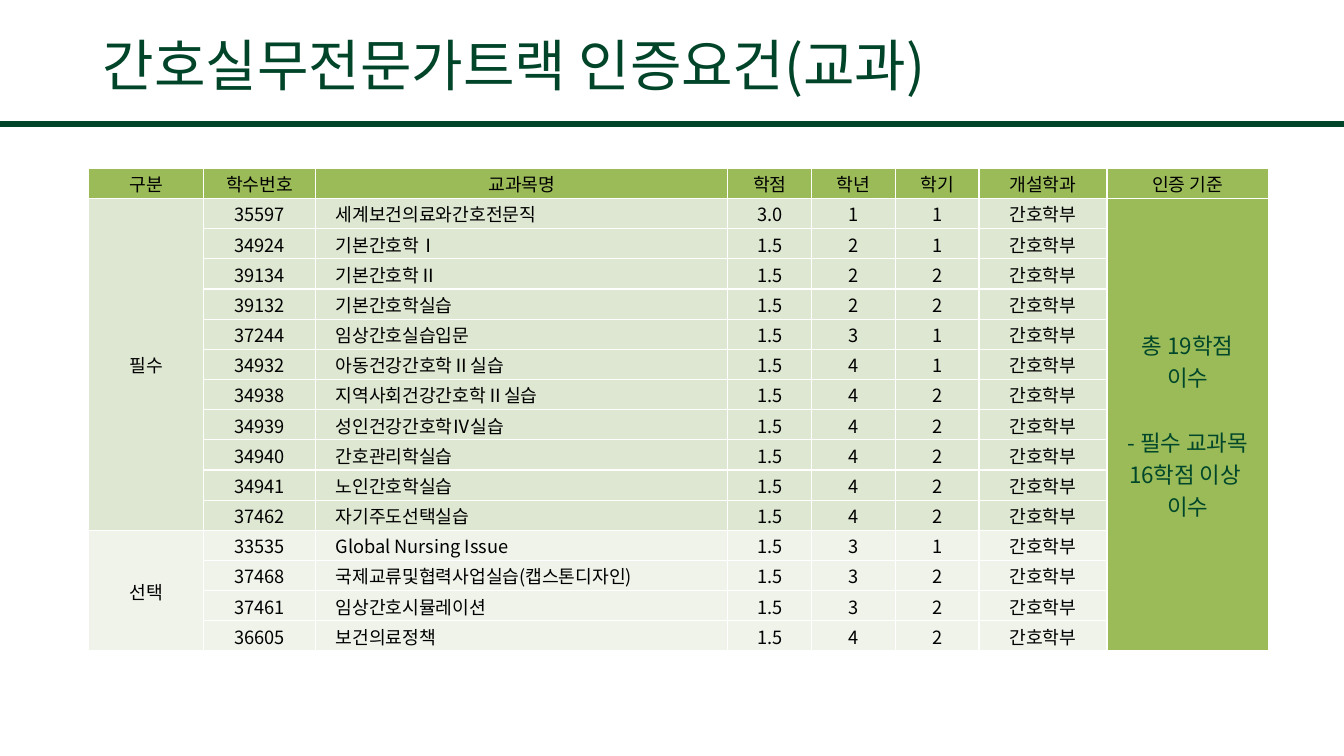
from pptx import Presentation, util as u
from pptx.dml.color import RGBColor
from pptx.enum import shapes, text
from pptx.oxml.ns import qn
from lxml import etree

THEME = dict(font="Noto Sans CJK KR", title=40, cell=13, rule=4.5, criteria=16,
             green="004529", dark="00462A", header="9BBB59",
             required="DEE7D1", elective="EFF3EA", black="000000", border="FFFFFF")
W, H = 13.33, 7.5


def style(p, size, color, align):
    p.alignment = align
    for r in p.runs:
        r.font.size = u.Pt(size)
        r.font.name = THEME["font"]
        r.font.color.rgb = RGBColor.from_string(THEME[color])
        etree.SubElement(r.font._element, qn("a:ea"), typeface=THEME["font"])


def add_borders(cell):
    tcPr = cell._tc.get_or_add_tcPr()
    for side in ("a:lnL", "a:lnR", "a:lnT", "a:lnB"):
        ln = etree.SubElement(tcPr, qn(side), w=str(u.Pt(1)))
        fill = etree.SubElement(ln, qn("a:solidFill"))
        etree.SubElement(fill, qn("a:srgbClr"), val=THEME["border"])


prs = Presentation()
prs.slide_width, prs.slide_height = u.Inches(W), u.Inches(H)
s = prs.slides.add_slide(prs.slide_layouts[5])
LEFT, CENTER = text.PP_ALIGN.LEFT, text.PP_ALIGN.CENTER

# Rule under the title
rule = s.shapes.add_connector(shapes.MSO_CONNECTOR.STRAIGHT, 0, u.Inches(1.23),
                              u.Inches(W), u.Inches(1.23))
rule.line.color.rgb = RGBColor.from_string(THEME["green"])
rule.line.width = u.Pt(THEME["rule"])
etree.SubElement(rule._element.spPr, qn("a:effectLst"))

# Title
title = s.shapes.title
title.left, title.top, title.width, title.height = map(u.Inches, (0.92, 0.16, 11.5, 1.03))
tf = title.text_frame
tf.text = "간호실무전문가트랙 인증요건(교과)"
tf.vertical_anchor = text.MSO_ANCHOR.MIDDLE
tf.auto_size = text.MSO_AUTO_SIZE.NONE
tf.paragraphs[0].line_spacing = 0.9
style(tf.paragraphs[0], THEME["title"], "green", LEFT)

# Course data: number, name, credits, year, semester
headers = ["구분", "학수번호", "교과목명", "학점", "학년", "학기", "개설학과", "인증 기준"]
groups = [
    ("필수", "required", [
        ("35597", "세계보건의료와간호전문직", "3.0", "1", "1"),
        ("34924", "기본간호학Ⅰ", "1.5", "2", "1"),
        ("39134", "기본간호학Ⅱ", "1.5", "2", "2"),
        ("39132", "기본간호학실습", "1.5", "2", "2"),
        ("37244", "임상간호실습입문", "1.5", "3", "1"),
        ("34932", "아동건강간호학Ⅱ실습", "1.5", "4", "1"),
        ("34938", "지역사회건강간호학Ⅱ실습", "1.5", "4", "2"),
        ("34939", "성인건강간호학Ⅳ실습", "1.5", "4", "2"),
        ("34940", "간호관리학실습", "1.5", "4", "2"),
        ("34941", "노인간호학실습", "1.5", "4", "2"),
        ("37462", "자기주도선택실습", "1.5", "4", "2"),
    ]),
    ("선택", "elective", [
        ("33535", "Global Nursing Issue", "1.5", "3", "1"),
        ("37468", "국제교류및협력사업실습(캡스톤디자인)", "1.5", "3", "2"),
        ("37461", "임상간호시뮬레이션", "1.5", "3", "2"),
        ("36605", "보건의료정책", "1.5", "4", "2"),
    ]),
]
criteria = "총 19학점\n이수\n- 필수 교과목\n16학점 이상 \v이수"
department = "간호학부"
NAME, LAST = headers.index("교과목명"), len(headers) - 1

# Lay the data out as rows of text with one fill per row
rows, fills = [headers], ["header"]
for group, fill, courses in groups:
    for i, course in enumerate(courses):
        rows.append([group if i == 0 else "", *course, department, ""])
        fills.append(fill)
rows[1][LAST] = criteria

# Table grid
widths = [1.14, 1.11, 4.09, 0.83, 0.83, 0.83, 1.27, 1.6]
table_height = 4.79
table = s.shapes.add_table(len(rows), len(headers), u.Inches(0.88), u.Inches(1.67),
                           u.Inches(sum(widths)), u.Inches(table_height)).table
table.first_row = table.horz_banding = False
for column, width in zip(table.columns, widths):
    column.width = u.Inches(width)
for row in table.rows:
    row.height = u.Inches(table_height / len(rows))

# Cells
for i, row in enumerate(rows):
    for j, value in enumerate(row):
        cell = table.cell(i, j)
        is_name = i > 0 and j == NAME
        is_criteria = i > 0 and j == LAST
        add_borders(cell)
        cell.fill.solid()
        cell.fill.fore_color.rgb = RGBColor.from_string(
            THEME["header" if is_criteria else fills[i]])
        cell.vertical_anchor = text.MSO_ANCHOR.MIDDLE
        cell.margin_left = u.Inches(0.2 if is_name else 0.01)
        cell.margin_right = cell.margin_top = u.Inches(0.01)
        cell.margin_bottom = 0
        cell.text_frame.text = value
        for p in cell.text_frame.paragraphs:
            style(p, THEME["criteria" if is_criteria else "cell"],
                  "dark" if is_criteria else "black", LEFT if is_name else CENTER)

# Merged cells
first = 1
for group, fill, courses in groups:
    last = first + len(courses) - 1
    table.cell(first, 0).merge(table.cell(last, 0))
    first = last + 1
table.cell(1, LAST).merge(table.cell(len(rows) - 1, LAST))
table.cell(1, LAST).text_frame.paragraphs[2].space_before = u.Pt(23)

prs.save("out.pptx")
